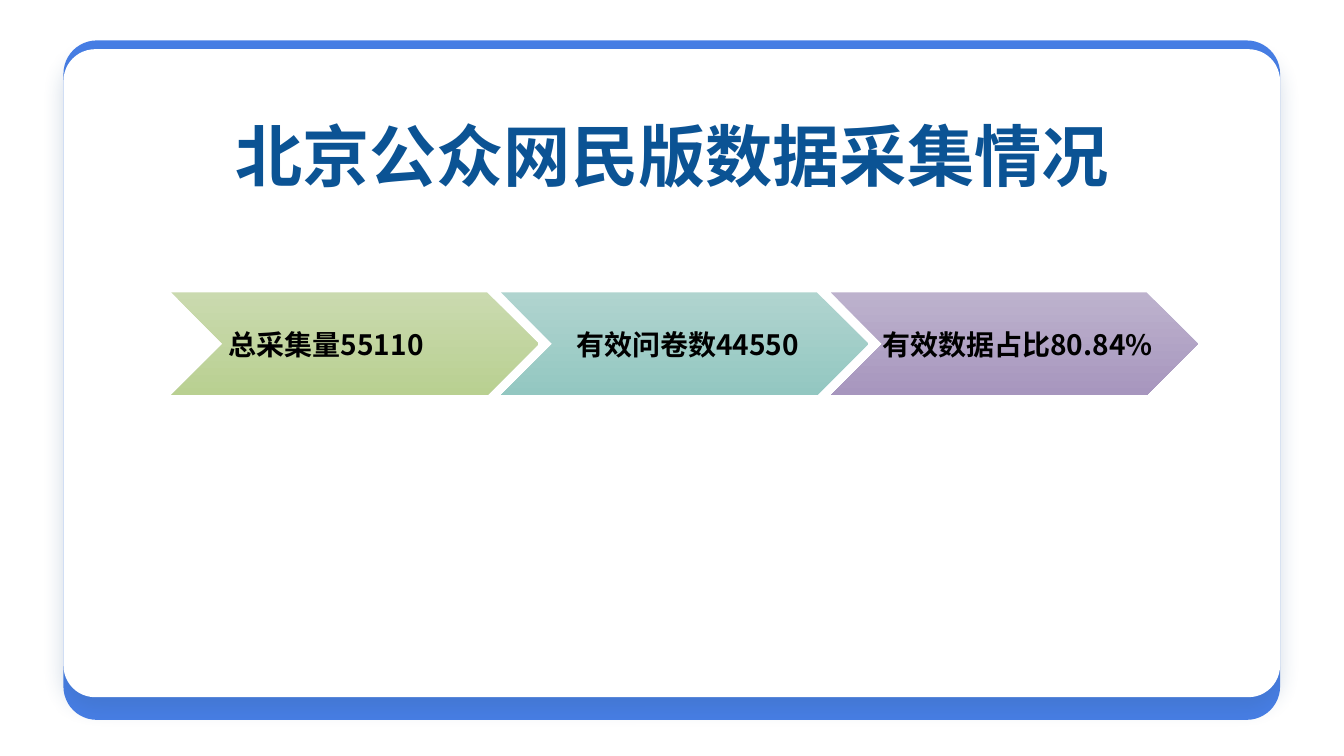
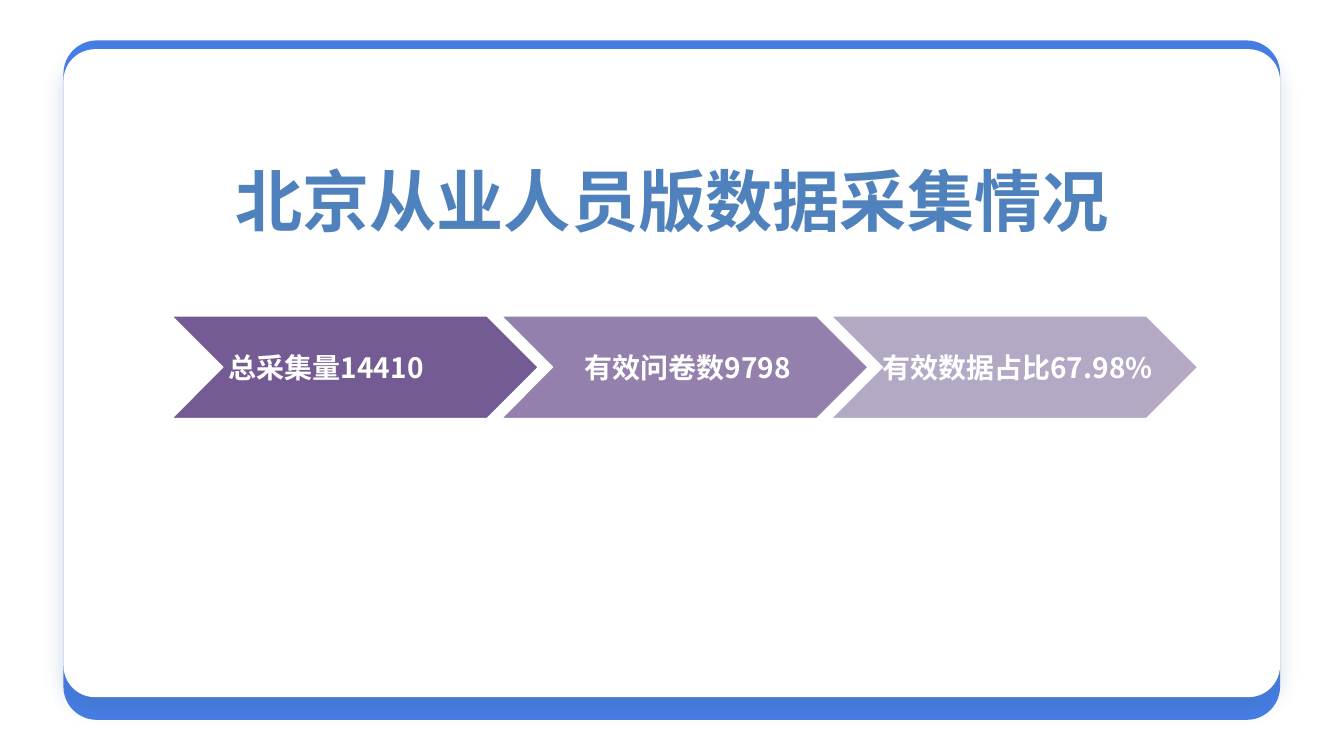
from lxml import etree
from pptx import Presentation
from pptx.dml.color import RGBColor
from pptx.enum.lang import MSO_LANGUAGE_ID
from pptx.enum.shapes import MSO_SHAPE
from pptx.enum.text import MSO_ANCHOR, MSO_AUTO_SIZE, PP_ALIGN
from pptx.oxml.ns import qn
from pptx.util import Cm, Pt

CHEVRON = MSO_SHAPE.CHEVRON
ROUNDED = MSO_SHAPE.ROUNDED_RECTANGLE
MIDDLE = MSO_ANCHOR.MIDDLE
LEFT, CENTER = PP_ALIGN.LEFT, PP_ALIGN.CENTER
CHINESE = MSO_LANGUAGE_ID.SIMPLIFIED_CHINESE

TITLE_FONT = "Arial"
LABEL_FONT = "Noto Sans CJK SC"

BLACK = RGBColor(0x00, 0x00, 0x00)
WHITE = RGBColor(0xFF, 0xFF, 0xFF)
FRAME_BLUE = RGBColor(0x47, 0x7E, 0xE5)
SHADOW_BLUE = RGBColor(0x37, 0x60, 0x92)
DEEP_BLUE = RGBColor(0x0B, 0x53, 0x94)
SOFT_BLUE = RGBColor(0x4F, 0x81, 0xBD)
GREEN_TOP = RGBColor(0xCA, 0xDA, 0xAF)
GREEN_BOTTOM = RGBColor(0xB9, 0xD0, 0x91)
TEAL_TOP = RGBColor(0xB0, 0xD4, 0xCF)
TEAL_BOTTOM = RGBColor(0x93, 0xC7, 0xC1)
LILAC_TOP = RGBColor(0xBD, 0xB2, 0xCD)
LILAC_BOTTOM = RGBColor(0xA7, 0x96, 0xBE)
PURPLE_DARK = RGBColor(0x74, 0x5B, 0x93)
PURPLE_MID = RGBColor(0x94, 0x80, 0xAD)
PURPLE_LIGHT = RGBColor(0xB4, 0xA9, 0xC5)

# Each step is a label and its fill: one colour, or two for a gradient
SLIDES = [
    dict(title="北京公众网民版数据采集情况", title_color=DEEP_BLUE, title_top=2.69,
         steps_top=7.37, label_color=BLACK, outlined=False,
         steps=[("总采集量55110", (GREEN_TOP, GREEN_BOTTOM)),
                ("有效问卷数44550", (TEAL_TOP, TEAL_BOTTOM)),
                ("有效数据占比80.84%", (LILAC_TOP, LILAC_BOTTOM))]),
    dict(title="北京从业人员版数据采集情况", title_color=SOFT_BLUE, title_top=3.81,
         steps_top=7.96, label_color=WHITE, outlined=True,
         steps=[("总采集量14410", (PURPLE_DARK,)),
                ("有效问卷数9798", (PURPLE_MID,)),
                ("有效数据占比67.98%", (PURPLE_LIGHT,))]),
]
STEP_LEFT, STEP_PITCH, STEP_WIDTH, STEP_HEIGHT = 4.32, 8.31, 9.25, 2.59


def write_text(frame, text, font_name, size, color, align):
    frame.auto_size = MSO_AUTO_SIZE.NONE
    frame.vertical_anchor = MIDDLE
    para = frame.paragraphs[0]
    span = para.add_run()
    span.text = text
    span.font.language_id = CHINESE
    para.alignment = align
    para.font.size = Pt(size)
    para.font.bold = True
    para.font.color.rgb = color
    para.font.name = font_name
    defaults = para._p.find(".//" + qn("a:defRPr"))
    etree.SubElement(defaults, qn("a:ea"), typeface=LABEL_FONT)
    return para


def add_plain_shape(page, kind, left, top, width, height):
    shape = page.shapes.add_shape(kind, Cm(left), Cm(top), Cm(width), Cm(height))
    shape.shadow.inherit = False
    shape.line.fill.background()
    return shape


deck = Presentation()
deck.slide_width, deck.slide_height = Cm(33.87), Cm(19.05)
layout = deck.slide_layouts[5]
pages = [deck.slides.add_slide(layout) for _ in SLIDES]

# Shared frame: a blue card under a white one, moved to the back of the layout
cards = [(1.02, 17.12, FRAME_BLUE), (1.24, 16.33, WHITE)]
for order, (top, height, color) in enumerate(cards):
    card = add_plain_shape(pages[0], ROUNDED, 1.6, top, 30.66, height)
    card.adjustments[0] = 0.049
    card.fill.solid()
    card.fill.fore_color.rgb = color
    layout.shapes.element.insert(2 + order, card.element)

# Soft shadow below the white card
effects = card.element.spPr.find(qn("a:effectLst"))
shadow = etree.SubElement(effects, qn("a:outerShdw"), blurRad=str(Pt(16)),
                          dist=str(Pt(8)), dir="5400000", algn="t", rotWithShape="0")
tint = etree.SubElement(shadow, qn("a:srgbClr"), val=str(SHADOW_BLUE))
etree.SubElement(tint, qn("a:alpha"), val="23000")

for page, content in zip(pages, SLIDES):
    # Title
    title = page.shapes.title
    title.left, title.top = Cm(2.75), Cm(content["title_top"])
    title.width, title.height = Cm(28.37), Cm(2.69)
    heading = write_text(title.text_frame, content["title"], TITLE_FONT, 48,
                         content["title_color"], CENTER)
    heading.line_spacing = 0.9

    # Row of chevrons
    for index, (label, colors) in enumerate(content["steps"]):
        step = add_plain_shape(page, CHEVRON, STEP_LEFT + index * STEP_PITCH,
                               content["steps_top"], STEP_WIDTH, STEP_HEIGHT)
        if len(colors) == 2:
            step.fill.gradient()
            step.fill.gradient_angle = 270
            for stop, color in zip(step.fill.gradient_stops, colors):
                stop.color.rgb = color
        else:
            step.fill.solid()
            step.fill.fore_color.rgb = colors[0]
        if content["outlined"]:
            step.line.color.rgb = WHITE
            step.line.width = Pt(1)

        # The first label sits at the notch, the others are centred
        first = index == 0
        frame = step.text_frame
        frame.word_wrap = first
        frame.margin_left = Cm(0.15 if first else 0.23)
        frame.margin_right = frame.margin_top = frame.margin_bottom = Cm(0.08)
        write_text(frame, label, LABEL_FONT, 20, content["label_color"],
                   LEFT if first else CENTER)

deck.save("out.pptx")
